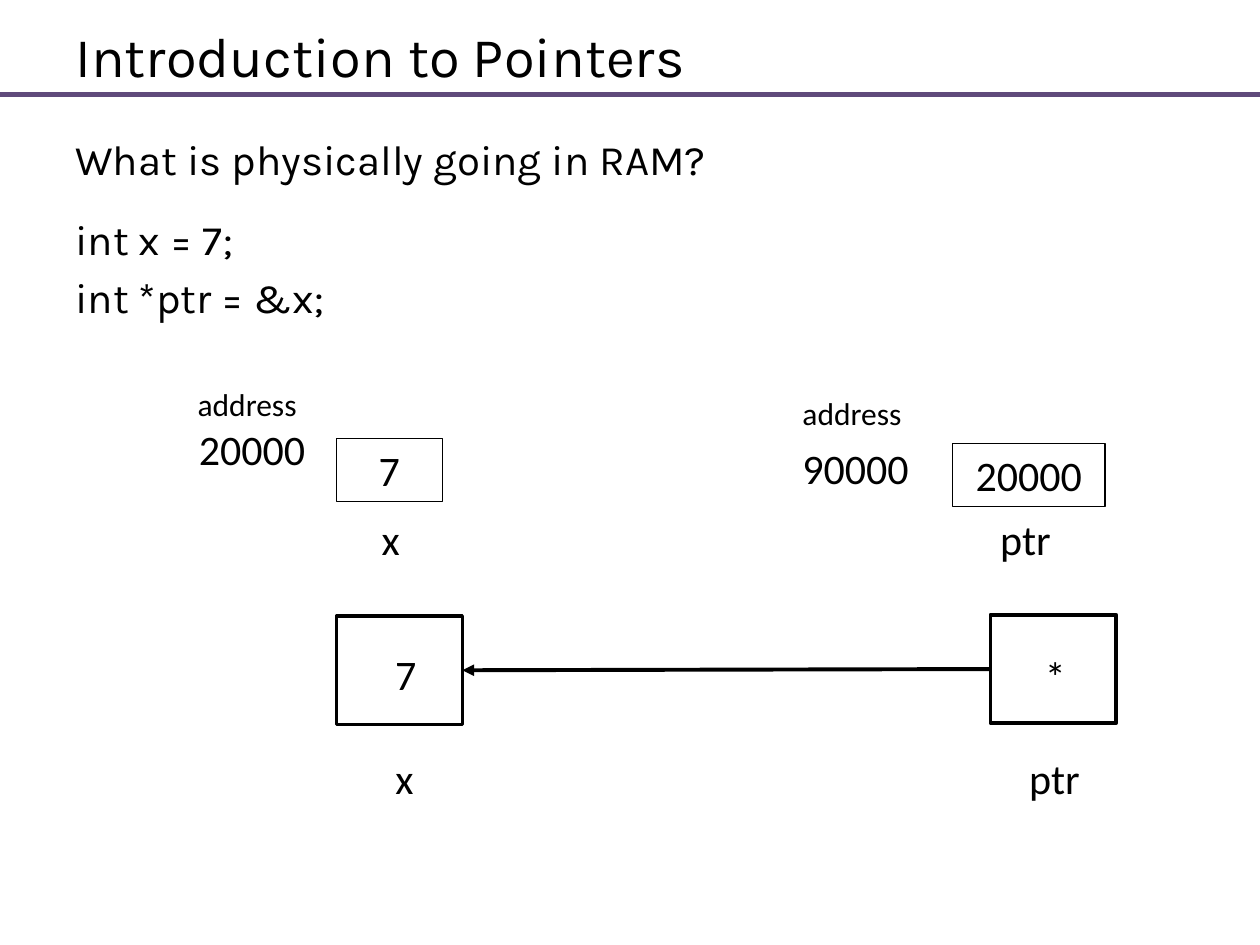
from lxml import etree
from pptx import Presentation
from pptx.dml.color import RGBColor
from pptx.enum.shapes import MSO_CONNECTOR, MSO_SHAPE
from pptx.enum.text import MSO_ANCHOR, PP_ALIGN
from pptx.oxml.ns import qn
from pptx.util import Emu, Pt

RECTANGLE = MSO_SHAPE.RECTANGLE
STRAIGHT = MSO_CONNECTOR.STRAIGHT
LEFT, CENTER = PP_ALIGN.LEFT, PP_ALIGN.CENTER
TOP, MIDDLE = MSO_ANCHOR.TOP, MSO_ANCHOR.MIDDLE
LEFT_SIDE, RIGHT_SIDE = 1, 3
EMU_PER_PX = 9144
BLACK, WHITE, PURPLE = "000000", "FFFFFF", "604A7B"
HEADING_FONT, LABEL_FONT = "Karla", "Calibri"


def px(length):
    return Emu(length * EMU_PER_PX)


def color(value):
    return RGBColor.from_string(value)


class SlideBuilder:
    def __init__(self, slide):
        self.slide = slide

    def fill_text(self, shape, text, size, font, align, anchor=TOP):
        frame = shape.text_frame
        frame.word_wrap = True
        frame.vertical_anchor = anchor
        frame.text = text
        for paragraph in frame.paragraphs:
            paragraph.alignment = align
            for run in paragraph.runs:
                run.font.size = Pt(size)
                run.font.name = font
                run.font.color.rgb = color(BLACK)
        return frame

    def text(self, box, text, size=24, font=LABEL_FONT, align=LEFT, anchor=TOP, shapes=None):
        shapes = shapes or self.slide.shapes
        shape = shapes.add_textbox(*map(px, box))
        return self.fill_text(shape, text, size, font, align, anchor)

    def rectangle(self, box, width, fill=None, text=None, shapes=None):
        shapes = shapes or self.slide.shapes
        shape = shapes.add_shape(RECTANGLE, *map(px, box))
        shape.shadow.inherit = False
        if fill:
            shape.fill.solid()
            shape.fill.fore_color.rgb = color(fill)
        else:
            shape.fill.background()
        shape.line.color.rgb = color(BLACK)
        shape.line.width = Pt(width)
        if text:
            self.fill_text(shape, text, 24, LABEL_FONT, CENTER)
        return shape

    def line(self, start, end, line_color, width):
        connector = self.slide.shapes.add_connector(STRAIGHT, *map(px, start + end))
        connector.line.color.rgb = color(line_color)
        connector.line.width = Pt(width)
        etree.SubElement(connector.element.spPr, qn("a:effectLst"))
        return connector

    def arrow(self, source, target, width):
        connector = self.line((0, 0), (0, 0), BLACK, width)
        connector.begin_connect(source, LEFT_SIDE)
        connector.end_connect(target, RIGHT_SIDE)
        etree.SubElement(connector.get_or_add_ln(), qn("a:tailEnd"), type="triangle")

    def memory_cell(self, address_box, number_box, number, value_box, value, name_box, name):
        group = self.slide.shapes.add_group_shape()
        shapes = group.shapes
        self.rectangle(value_box, 0.75, text=value, shapes=shapes)
        self.text(number_box, number, shapes=shapes)
        self.text(name_box, name, shapes=shapes)
        self.text(address_box, "address", size=18, shapes=shapes)


def main():
    presentation = Presentation()
    presentation.slide_width, presentation.slide_height = px(1000), px(750)
    slide = presentation.slides.add_slide(presentation.slide_layouts[6])
    builder = SlideBuilder(slide)

    builder.text((50, 0, 900, 87), "Introduction to Pointers", 32, HEADING_FONT, anchor=MIDDLE)
    builder.line((0, 75), (1000, 75), PURPLE, 2.5)

    code = "What is physically going in RAM?\nint x = 7;\nint *ptr = &x;"
    body = builder.text((50, 101, 900, 553), code, font=HEADING_FONT)
    for paragraph in body.paragraphs:
        paragraph.space_before = Pt(4.8)
    body.paragraphs[0].space_after = Pt(12)

    builder.memory_cell((147, 301, 105, 40), (148, 331, 145, 50), "20000",
                        (267, 348, 84, 50), "7", (293, 403, 35, 50), "x")
    builder.memory_cell((627, 308, 105, 40), (627, 346, 129, 50), "90000",
                        (756, 352, 121, 50), "20000", (784, 403, 67, 50), "ptr")

    x_box = builder.rectangle((267, 489, 100, 86), 2, WHITE)
    pointer_box = builder.rectangle((786, 488, 100, 86), 2, WHITE)
    builder.arrow(pointer_box, x_box, 2.25)
    builder.text((293, 510, 58, 50), "7", align=CENTER)
    builder.text((807, 511, 61, 50), "*", align=CENTER)
    builder.text((304, 592, 35, 50), "x")
    builder.text((807, 592, 67, 50), "ptr")

    presentation.save("out.pptx")


if __name__ == "__main__":
    main()
